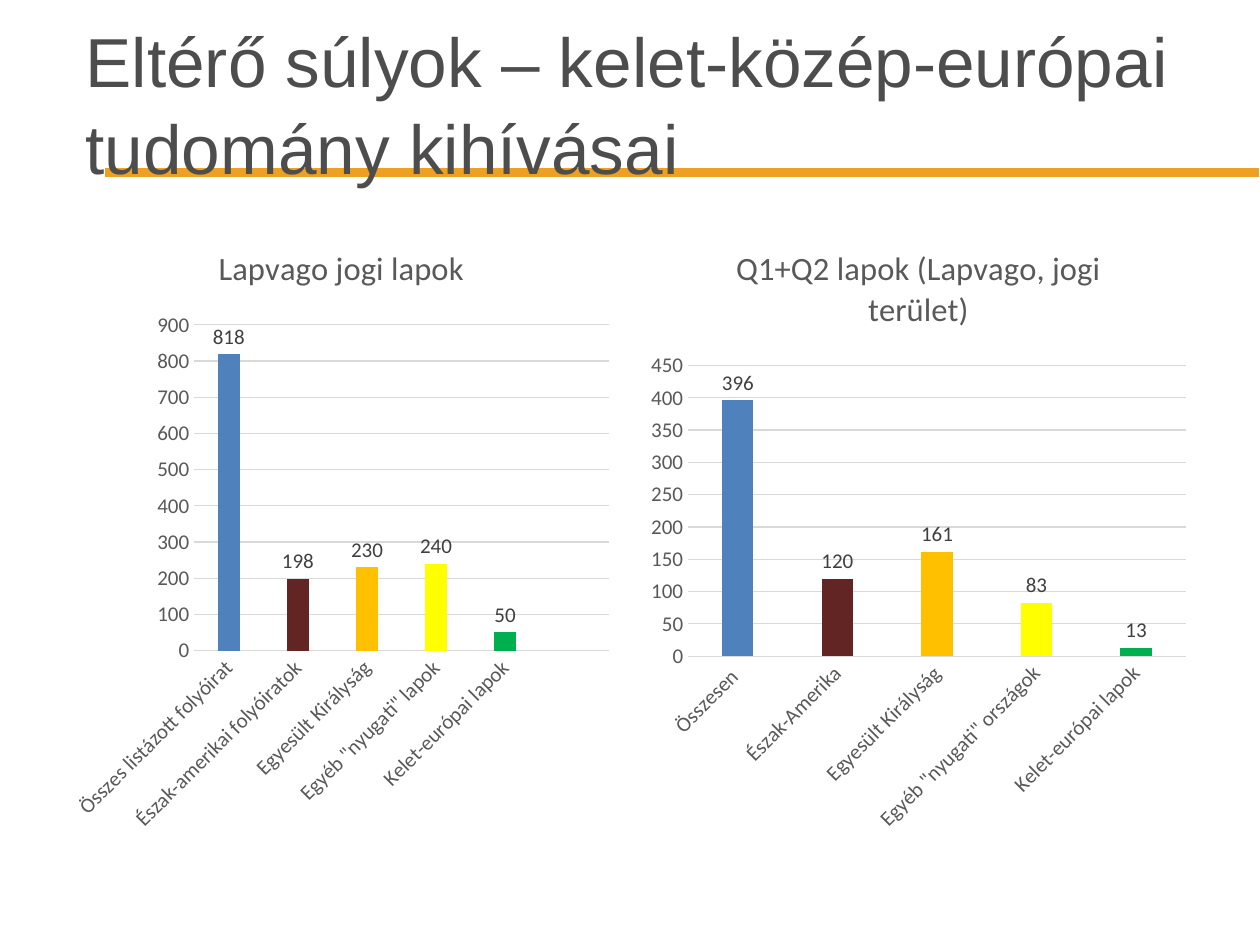
import dataclasses

import pptx
import pptx.chart.data
import pptx.dml.color
import pptx.enum.chart
import pptx.enum.shapes
import pptx.enum.text
import pptx.util

Inches = pptx.util.Inches
Pt = pptx.util.Pt


@dataclasses.dataclass(frozen=True)
class Theme:
    heading_font: str = "Arial"
    chart_font: str = "Calibri"
    heading: str = "4D4D4D"
    rule: str = "EDA021"
    white: str = "FFFFFF"
    axis_text: str = "595959"
    label_text: str = "404040"
    grid: str = "D9D9D9"
    columns: tuple = ("4F81BD", "632523", "FFC000", "FFFF00", "00B050")
    heading_size: float = 39.6
    chart_title_size: float = 18.6
    chart_size: float = 12


THEME = Theme()


def rgb(value):
    return pptx.dml.color.RGBColor.from_string(value)


def format_font(font, *, name, size, color):
    font.name = name
    font.size = Pt(size)
    font.bold = False
    font.color.rgb = rgb(color)


def write_text(frame, text, *, name, size, color, align=None, spacing=None):
    para = frame.paragraphs[0]
    para.alignment = align
    para.line_spacing = spacing
    span = para.add_run()
    span.text = text
    format_font(span.font, name=name, size=size, color=color)


def format_line(line, color, width=0.75):
    line.color.rgb = rgb(color)
    line.width = Pt(width)


def add_rule(page, box):
    rule = page.shapes.add_shape(pptx.enum.shapes.MSO_SHAPE.RECTANGLE, *box)
    rule.shadow.inherit = False
    rule.fill.solid()
    rule.fill.fore_color.rgb = rgb(THEME.rule)
    format_line(rule.line, THEME.white)
    # Keep the rule behind the title
    page.shapes._spTree.insert(2, rule._element)


def place_title(page, box, text):
    title = page.shapes.title
    title.left, title.top, title.width, title.height = box
    frame = title.text_frame
    frame.word_wrap = True
    frame.auto_size = pptx.enum.text.MSO_AUTO_SIZE.NONE
    frame.vertical_anchor = pptx.enum.text.MSO_ANCHOR.MIDDLE
    write_text(frame, text, name=THEME.heading_font, size=THEME.heading_size,
               color=THEME.heading, align=pptx.enum.text.PP_ALIGN.LEFT, spacing=1.05)


def add_journal_chart(page, box, title, categories, values, top, step):
    data = pptx.chart.data.CategoryChartData()
    data.categories = categories
    data.add_series(title, values)
    kind = pptx.enum.chart.XL_CHART_TYPE.COLUMN_CLUSTERED
    chart = page.shapes.add_chart(kind, *box, data).chart
    text_format = dict(name=THEME.chart_font, size=THEME.chart_size)
    format_font(chart.font, color=THEME.axis_text, **text_format)
    chart.has_legend = False

    # Heading
    chart.has_title = True
    write_text(chart.chart_title.text_frame, title, name=THEME.chart_font,
               size=THEME.chart_title_size, color=THEME.axis_text)
    chart.chart_title.include_in_layout = False

    # Axes
    for axis in (chart.category_axis, chart.value_axis):
        axis.major_tick_mark = pptx.enum.chart.XL_TICK_MARK.NONE
        axis.minor_tick_mark = pptx.enum.chart.XL_TICK_MARK.NONE
        format_font(axis.tick_labels.font, color=THEME.axis_text, **text_format)
    format_line(chart.category_axis.format.line, THEME.grid)
    scale = chart.value_axis
    scale.format.line.fill.background()
    scale.has_major_gridlines = True
    format_line(scale.major_gridlines.format.line, THEME.grid)
    scale.minimum_scale, scale.maximum_scale, scale.major_unit = 0, top, step

    # Columns and their values
    plot = chart.plots[0]
    plot.gap_width, plot.overlap = 219, -27
    plot.vary_by_categories = False
    series = plot.series[0]
    series.format.fill.solid()
    series.format.fill.fore_color.rgb = rgb(THEME.columns[0])
    for index, color in enumerate(THEME.columns[1:], start=1):
        fill = series.points[index].format.fill
        fill.solid()
        fill.fore_color.rgb = rgb(color)
    labels = series.data_labels
    labels.show_value = True
    labels.position = pptx.enum.chart.XL_LABEL_POSITION.OUTSIDE_END
    format_font(labels.font, color=THEME.label_text, **text_format)


def build_slide(deck):
    page = deck.slides.add_slide(deck.slide_layouts.get_by_name("Title Only"))
    add_rule(page, (Inches(0.83), Inches(1.33), Inches(9.17), Inches(0.08)))
    place_title(page, (Inches(0.58), Inches(0.18), Inches(9), Inches(1.25)),
                "Eltérő súlyok – kelet-közép-európai tudomány kihívásai")

    # The first chart ends with an unnamed, empty category
    charts = (
        ("Lapvago jogi lapok",
         ("Összes listázott folyóirat", "Észak-amerikai folyóiratok",
          "Egyesült Királyság", 'Egyéb "nyugati" lapok', "Kelet-európai lapok", ""),
         (818, 198, 230, 240, 50, None), 900, 100),
        ("Q1+Q2 lapok (Lapvago, jogi terület)",
         ("Összesen ", "Észak-Amerika", "Egyesült Királyság",
          'Egyéb "nyugati" országok', "Kelet-európai lapok"),
         (396, 120, 161, 83, 13), 450, 50),
    )
    left, width, gap = Inches(0.5), Inches(4.42), Inches(0.16)
    for index, chart in enumerate(charts):
        box = (left + index * (width + gap), Inches(1.75), width, Inches(4.95))
        add_journal_chart(page, box, *chart)


def main():
    deck = pptx.Presentation()
    deck.slide_width, deck.slide_height = Inches(10), Inches(7.5)
    build_slide(deck)
    deck.save("out.pptx")


if __name__ == "__main__":
    main()
